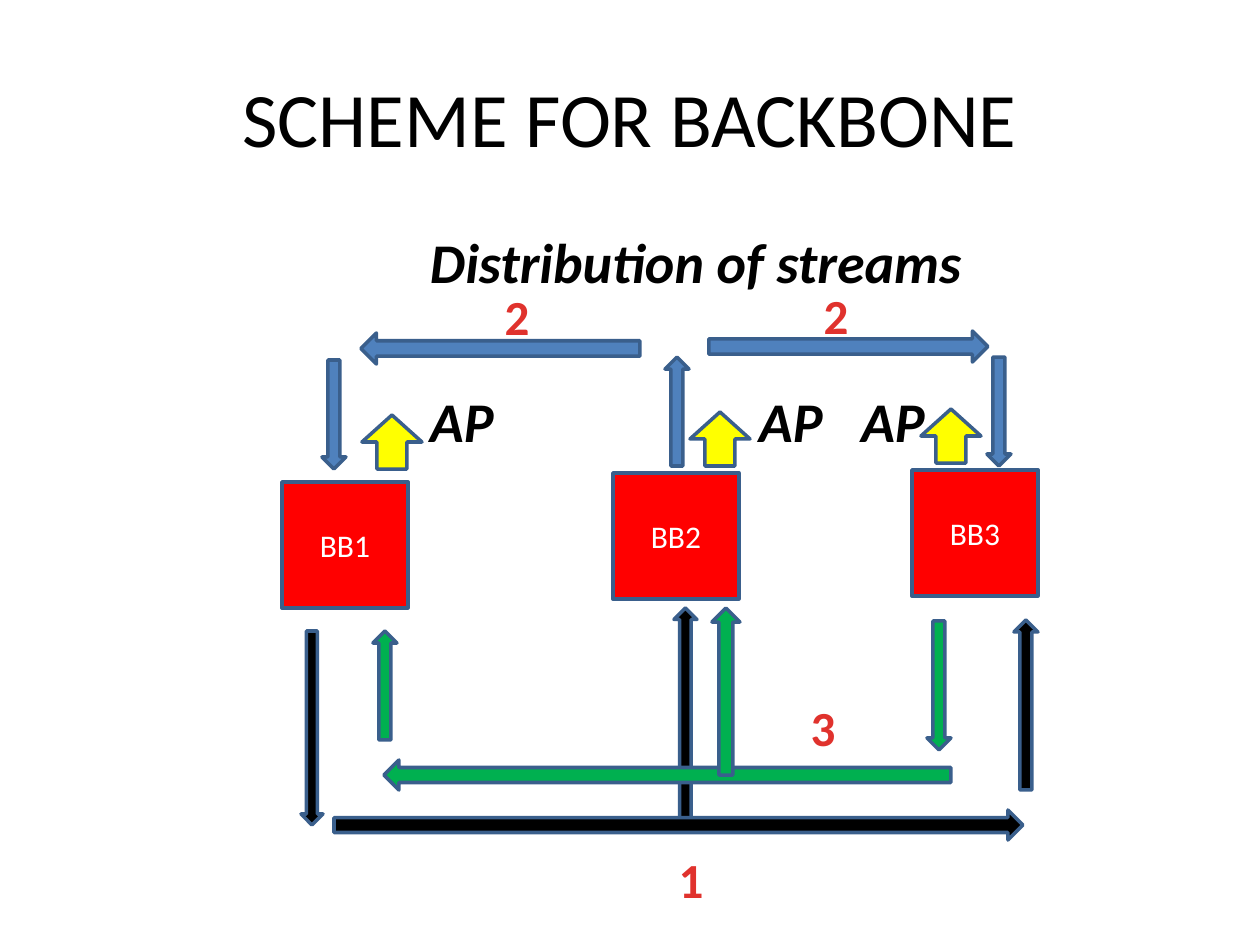
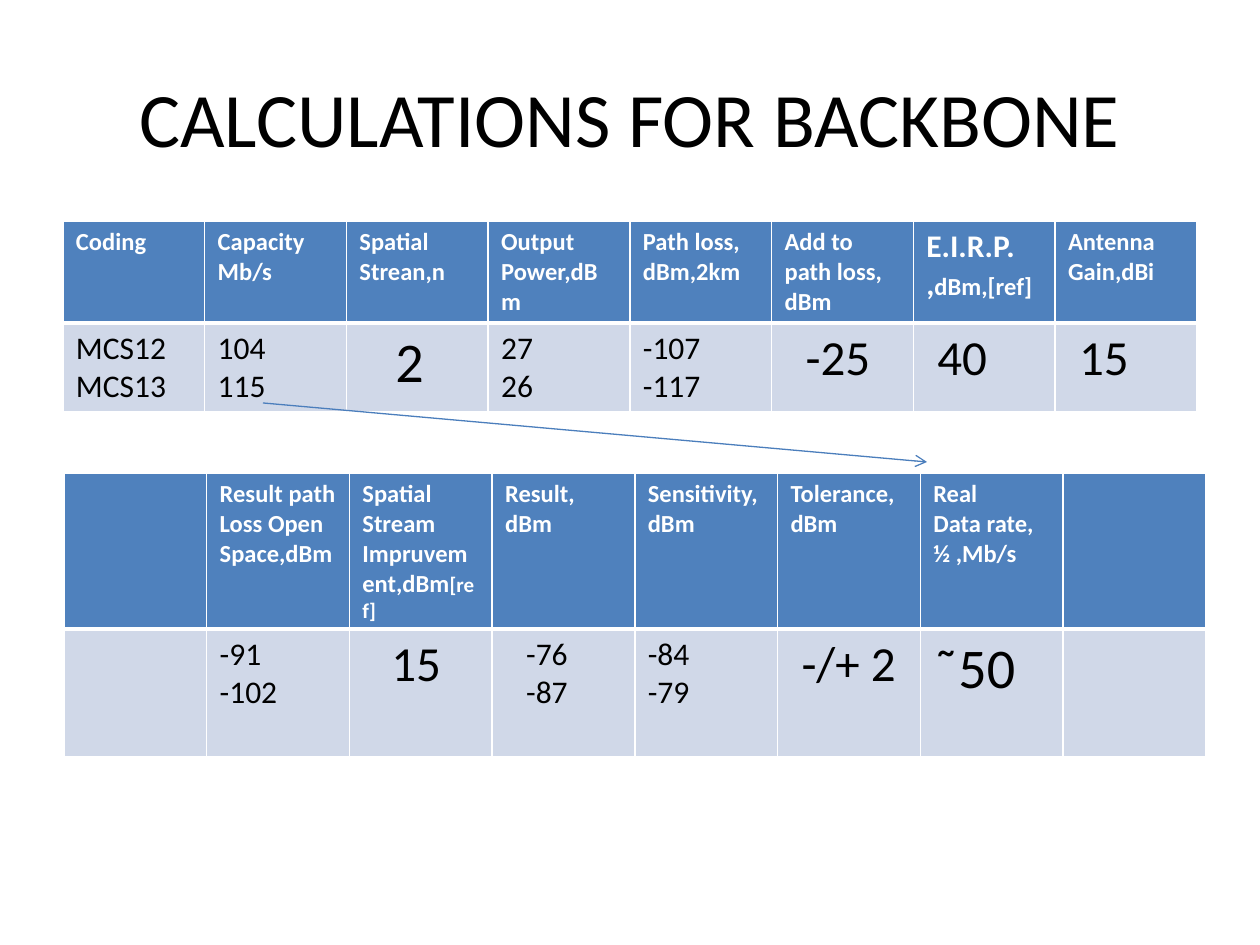
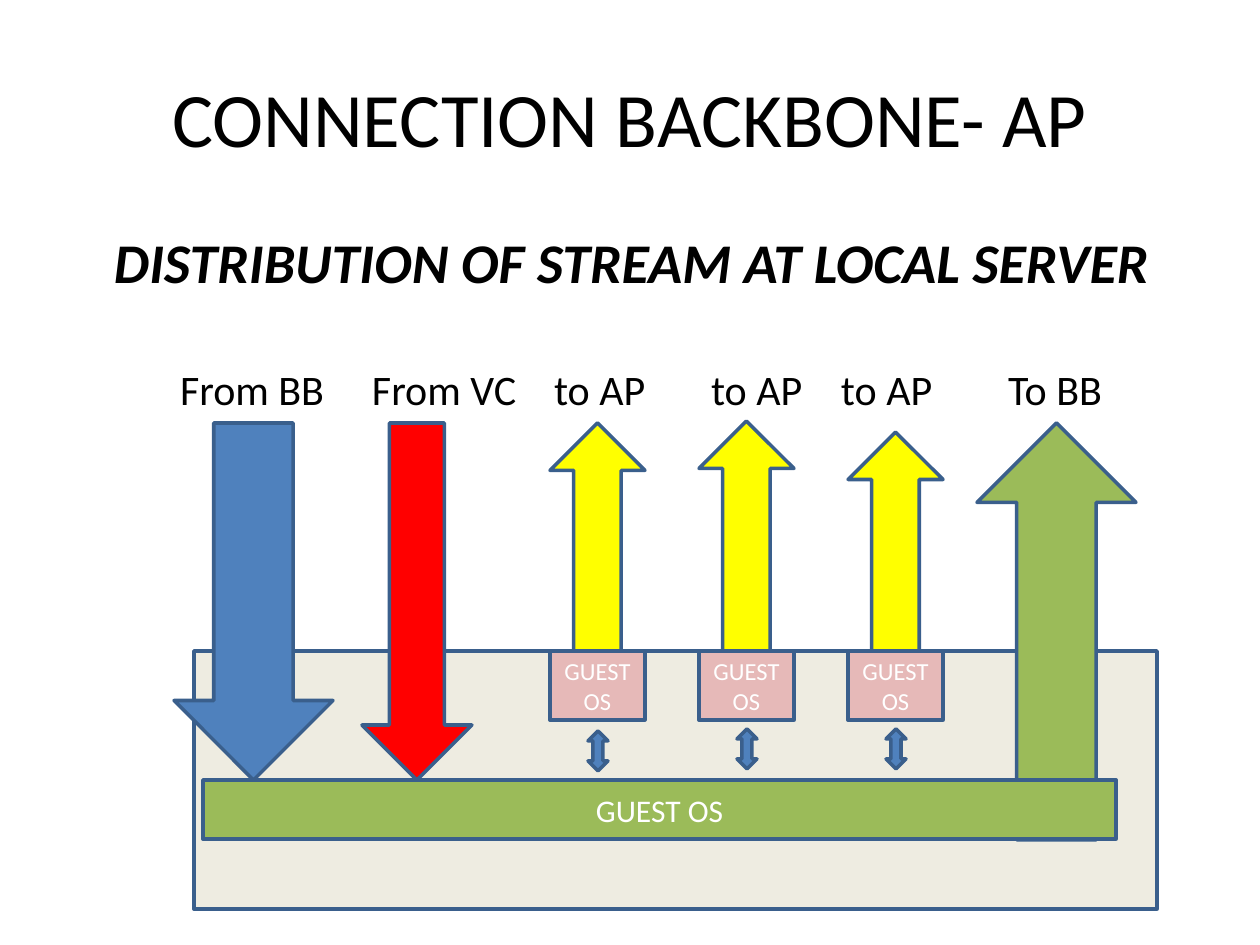
import pptx
import pptx.util
import pptx.dml.color
import pptx.enum.shapes
import pptx.enum.text
import pptx.oxml.ns
import lxml.etree

RGBColor = pptx.dml.color.RGBColor
Shape = pptx.enum.shapes.MSO_SHAPE
Align = pptx.enum.text.PP_ALIGN
Anchor = pptx.enum.text.MSO_ANCHOR
qn = pptx.oxml.ns.qn

# Shared look
EMU_PER_PX = 914400 / 126
FONT = "Calibri"
BLACK = RGBColor(0x00, 0x00, 0x00)
WHITE = RGBColor(0xFF, 0xFF, 0xFF)
RED = RGBColor(0xFF, 0x00, 0x00)
YELLOW = RGBColor(0xFF, 0xFF, 0x00)
BLUE = RGBColor(0x4F, 0x81, 0xBD)
GREEN = RGBColor(0x00, 0xB0, 0x50)
OLIVE = RGBColor(0x9B, 0xBB, 0x59)
PINK = RGBColor(0xE6, 0xB9, 0xB8)
CREAM = RGBColor(0xEE, 0xEC, 0xE1)
PALE_BLUE = RGBColor(0xD0, 0xD8, 0xE8)
OUTLINE = RGBColor(0x3A, 0x5F, 0x8C)
POINTER = RGBColor(0x4B, 0x7E, 0xBC)
STREAM_RED = RGBColor(0xE0, 0x32, 0x2D)
CELL_MARGIN = 13


def px(length):
    return pptx.util.Emu(round(length * EMU_PER_PX))


def style_font(font, size, color, bold=False, italic=False):
    font.name = FONT
    font.size = pptx.util.Pt(size)
    font.color.rgb = color
    font.bold = bold
    font.italic = italic


def add_page(deck, title):
    page = deck.slides.add_slide(deck.slide_layouts[6])
    add_label(page, title, 63, 38, 1134, 157, 44, align=Align.CENTER)
    return page


def add_label(page, text, left, top, width, height, size,
              color=BLACK, bold=False, italic=False, align=Align.LEFT):
    box = page.shapes.add_textbox(px(left), px(top), px(width), px(height))
    frame = box.text_frame
    frame.word_wrap = True
    frame.vertical_anchor = Anchor.MIDDLE
    frame.margin_left = frame.margin_right = 0
    frame.margin_top = frame.margin_bottom = 0
    frame.text = text
    para = frame.paragraphs[0]
    para.alignment = align
    style_font(para.runs[0].font, size, color, bold, italic)


def add_block(page, kind, fill, left, top, width, height, text="", size=18):
    block = page.shapes.add_shape(kind, px(left), px(top), px(width), px(height))
    block.shadow.inherit = False
    block.fill.solid()
    block.fill.fore_color.rgb = fill
    block.line.color.rgb = OUTLINE
    block.line.width = pptx.util.Pt(2)
    if text:
        block.text_frame.text = text
        block.text_frame.vertical_anchor = Anchor.MIDDLE
        for para in block.text_frame.paragraphs:
            para.alignment = Align.CENTER
            for span in para.runs:
                style_font(span.font, size, WHITE)


def add_pointer(page, x1, y1, x2, y2):
    pointer = page.shapes.add_connector(
        pptx.enum.shapes.MSO_CONNECTOR.STRAIGHT, px(x1), px(y1), px(x2), px(y2))
    pointer.line.color.rgb = POINTER
    pointer.line.width = pptx.util.Pt(0.75)
    outline = pointer.line._get_or_add_ln()
    lxml.etree.SubElement(outline, qn("a:tailEnd"), type="arrow")
    lxml.etree.SubElement(pointer.element.spPr, qn("a:effectLst"))


def set_borders(cell, top, bottom):
    props = cell._tc.get_or_add_tcPr()
    for side, points in (("L", 1), ("R", 1), ("T", top), ("B", bottom)):
        edge = lxml.etree.SubElement(props, qn("a:ln" + side),
                                     w=str(pptx.util.Pt(points)))
        fill = lxml.etree.SubElement(edge, qn("a:solidFill"))
        lxml.etree.SubElement(fill, qn("a:srgbClr"), val=str(WHITE))


def fill_cell(cell, lines, size, indent, is_header):
    """Each line is a string or a list of (text, size) spans."""
    set_borders(cell, 1 if is_header else 3, 3 if is_header else 1)
    cell.fill.solid()
    cell.fill.fore_color.rgb = BLUE if is_header else PALE_BLUE
    cell.margin_left = px(CELL_MARGIN + indent)
    frame = cell.text_frame
    for index, line in enumerate(lines):
        para = frame.paragraphs[0] if index == 0 else frame.add_paragraph()
        for text, span_size in [(line, size)] if isinstance(line, str) else line:
            span = para.add_run()
            span.text = text
            style_font(span.font, span_size, WHITE if is_header else BLACK,
                       bold=is_header)


def add_grid(page, left, top, width, row_heights, headers, values):
    """Headers are lists of lines; values are (lines, size, indent)."""
    count = len(headers)
    grid = page.shapes.add_table(2, count, px(left), px(top), px(width),
                                 px(sum(row_heights))).table
    for column in grid.columns:
        column.width = px(width / count)
    for row, height in zip(grid.rows, row_heights):
        row.height = px(height)
    for index, lines in enumerate(headers):
        fill_cell(grid.cell(0, index), lines, 14, 0, True)
    for index, (lines, size, indent) in enumerate(values):
        fill_cell(grid.cell(1, index), lines, size, indent, False)


def build_scheme(deck):
    page = add_page(deck, "SCHEME FOR BACKBONE")
    add_label(page, "Distribution of streams", 430, 227, 600, 68, 32,
              bold=True, italic=True)
    for left in (430, 759, 861):
        add_label(page, "AP", left, 386, 80, 68, 32, bold=True, italic=True)

    # Backbone nodes
    for name, left, top in (("BB1", 282, 482), ("BB2", 613, 473), ("BB3", 912, 470)):
        add_block(page, Shape.RECTANGLE, RED, left, top, 126, 126, name)

    # Stream arrows, from back to front
    for kind, fill, left, top, width, height in (
            (Shape.LEFT_ARROW, BLUE, 361, 333, 279, 31),
            (Shape.RIGHT_ARROW, BLUE, 709, 331, 279, 31),
            (Shape.DOWN_ARROW, BLUE, 322, 360, 24, 109),
            (Shape.UP_ARROW, BLACK, 674, 608, 23, 217),
            (Shape.DOWN_ARROW, GREEN, 927, 621, 24, 129),
            (Shape.DOWN_ARROW, BLACK, 301, 631, 22, 194),
            (Shape.DOWN_ARROW, BLUE, 987, 357, 24, 109),
            (Shape.RIGHT_ARROW, BLACK, 334, 810, 689, 30),
            (Shape.UP_ARROW, BLUE, 665, 357, 24, 109),
            (Shape.UP_ARROW, GREEN, 373, 631, 24, 109),
            (Shape.UP_ARROW, BLACK, 1014, 620, 24, 170),
            (Shape.LEFT_ARROW, GREEN, 384, 760, 567, 30),
            (Shape.UP_ARROW, GREEN, 712, 608, 28, 167)):
        add_block(page, kind, fill, left, top, width, height)

    # Stream numbers
    for number, left, top in (("2", 491, 280), ("2", 810, 279),
                              ("1", 665, 843), ("3", 797, 691)):
        add_label(page, number, left, top, 52, 72, 28, STREAM_RED,
                  bold=True, align=Align.CENTER)

    # Access point arrows
    for left, top in ((362, 415), (921, 409), (690, 412)):
        add_block(page, Shape.UP_ARROW, YELLOW, left, top, 60, 54)


def build_calculations(deck):
    page = add_page(deck, "CALCULATIONS FOR BACKBONE")
    link_headers = [
        ["Coding"],
        ["Capacity", "Mb/s"],
        ["Spatial", "Strean,n"],
        ["Output", "Power,dBm"],
        ["Path loss,", "dBm,2km"],
        ["Add to path loss,", "dBm"],
        [[("E.I.R.P.", 18)], [(",", 18), ("dBm,[ref]", 14)]],
        ["Antenna", "Gain,dBi"],
    ]
    link_values = [
        (["MCS12", "MCS13"], 18, 0),
        (["104", "115"], 18, 0),
        (["2"], 32, 36),
        (["27", "26"], 18, 0),
        (["-107", "-117"], 18, 0),
        (["-25"], 28, 21),
        (["40"], 28, 11),
        (["15"], 28, 11),
    ]
    add_grid(page, 63, 221, 1134, (102, 89), link_headers, link_values)

    result_headers = [
        [],
        ["Result path", "Loss Open", "Space,dBm"],
        ["Spatial", "Stream", [("Impruvement,dBm", 14), ("[ref]", 12)]],
        ["Result,", "dBm"],
        ["Sensitivity,", "dBm"],
        ["Tolerance,", "dBm"],
        ["Real", "Data rate,", "½ ,Mb/s"],
        [],
    ]
    result_values = [
        ([], 18, 0),
        (["-91", "-102"], 18, 0),
        (["15"], 28, 29),
        (["-76", "-87"], 18, 21),
        (["-84", "-79"], 18, 0),
        (["-/+ 2"], 28, 11),
        (["῀50"], 32, 0),
        ([], 18, 0),
    ]
    add_grid(page, 64, 473, 1142, (156, 128), result_headers, result_values)
    add_pointer(page, 263, 403, 927, 462)


def build_connection(deck):
    page = add_page(deck, "CONNECTION BACKBONE- AP")
    add_label(page, "DISTRIBUTION OF STREAM AT LOCAL SERVER", 114, 227, 1090, 68, 32,
              bold=True, italic=True)
    for text, left in (("From BB", 180), ("From VC", 372), ("to AP", 554),
                       ("to AP", 711), ("to AP", 841), ("To BB", 1008)):
        add_label(page, text, left, 363, 170, 51, 24)

    # Local server with the streams in and out
    add_block(page, Shape.RECTANGLE, CREAM, 194, 651, 963, 258)
    add_block(page, Shape.DOWN_ARROW, BLUE, 174, 423, 159, 357)
    add_block(page, Shape.DOWN_ARROW, RED, 362, 423, 110, 357)
    add_block(page, Shape.UP_ARROW, OLIVE, 977, 423, 159, 417)
    add_block(page, Shape.RECTANGLE, OLIVE, 203, 780, 913, 59, "GUEST OS")

    # Guest systems, one for each access point
    for index, (arrow_top, link_top) in enumerate(((423, 731), (421, 729), (432, 729))):
        left = 550 + 149 * index
        add_block(page, Shape.UP_ARROW, YELLOW, left, arrow_top, 95, 651 - arrow_top)
        add_block(page, Shape.RECTANGLE, PINK, left, 651, 95, 69, "GUEST\nOS", 14)
        add_block(page, Shape.UP_DOWN_ARROW, BLUE, left + 38, link_top, 20, 40)


def main():
    deck = pptx.Presentation()
    deck.slide_width = px(1260)
    deck.slide_height = px(945)
    build_scheme(deck)
    build_calculations(deck)
    build_connection(deck)
    deck.save("out.pptx")


if __name__ == "__main__":
    main()
